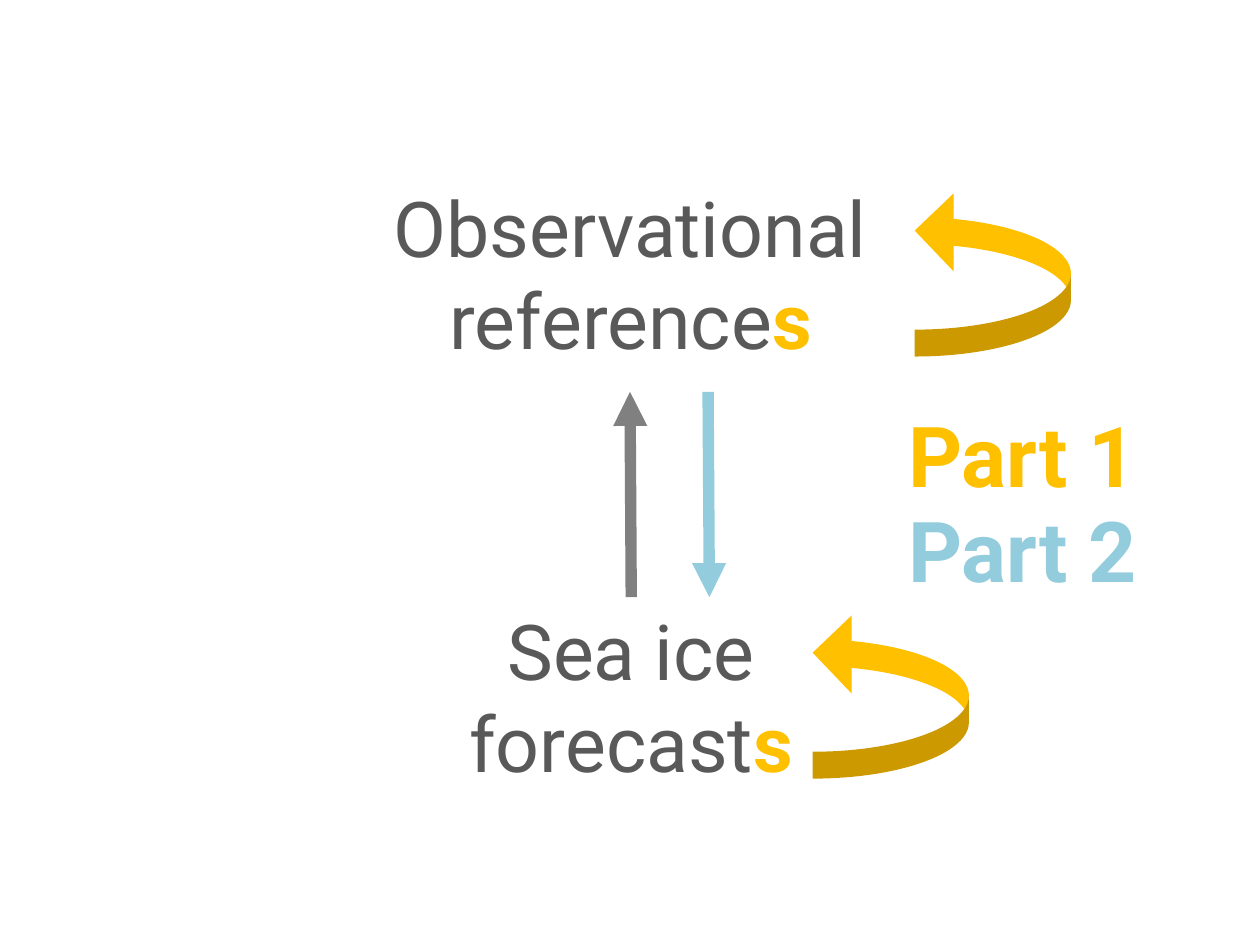
from pptx import Presentation
from pptx.dml.color import RGBColor
from pptx.enum.shapes import MSO_CONNECTOR, MSO_SHAPE
from pptx.enum.text import MSO_AUTO_SIZE, PP_ALIGN
from pptx.oxml.ns import qn
from pptx.util import Inches, Pt
from lxml import etree

LINE = MSO_CONNECTOR.STRAIGHT
LOOP = MSO_SHAPE.CURVED_LEFT_ARROW
GROW = MSO_AUTO_SIZE.SHAPE_TO_FIT_TEXT
LEFT, CENTER = PP_ALIGN.LEFT, PP_ALIGN.CENTER

FONT = "Roboto"
DARK = RGBColor(0x59, 0x59, 0x59)
GREY = RGBColor(0x80, 0x80, 0x80)
GOLD = RGBColor(0xFF, 0xC0, 0x00)
BLUE = RGBColor(0x93, 0xCD, 0xDD)


class Board:
    def __init__(self, slide):
        self.slide = slide

    def text(self, x, y, w, h, runs, size, align):
        """Add a text box of one paragraph; runs are (words, colour, bold)."""
        box = self.slide.shapes.add_textbox(
            Inches(x), Inches(y), Inches(w), Inches(h))
        frame = box.text_frame
        frame.word_wrap = True
        frame.auto_size = GROW
        para = frame.paragraphs[0]
        para.alignment = align
        para.font.name = FONT
        para.font.size = Pt(size)
        for words, color, bold in runs:
            run = para.add_run()
            run.text = words
            run.font.color.rgb = color
            run.font.bold = bold

    def topic(self, x, y, w, words):
        """Add a topic whose plural ending stands out."""
        runs = [(words, DARK, False), ("s", GOLD, True)]
        self.text(x, y, w, 1.58, runs, 44, CENTER)

    def label(self, y, words, color):
        self.text(7.11, y, 2.76, 0.91, [(words, color, True)], 48, LEFT)

    def arrow(self, start, end, color):
        x1, y1 = start
        x2, y2 = end
        line = self.slide.shapes.add_connector(
            LINE, Inches(x1), Inches(y1), Inches(x2), Inches(y2))
        line.line.color.rgb = color
        line.line.width = Pt(6.5)
        props = line._element.spPr
        etree.SubElement(props.find(qn("a:ln")), qn("a:tailEnd"),
                         type="triangle")
        etree.SubElement(props, qn("a:effectLst"))

    def loop(self, x, y):
        """Add a curved arrow that turns back to the upper left."""
        shape = self.slide.shapes.add_shape(
            LOOP, Inches(x), Inches(y), Inches(1.24), Inches(1.31))
        shape.adjustments[0] = 0.172
        shape._element.spPr.find(qn("a:xfrm")).set("flipV", "1")
        shape.shadow.inherit = False
        shape.fill.solid()
        shape.fill.fore_color.rgb = GOLD
        shape.line.fill.background()


def main():
    deck = Presentation()
    deck.slide_width, deck.slide_height = Inches(10), Inches(7.5)
    board = Board(deck.slides.add_slide(deck.slide_layouts[6]))

    board.topic(3.19, 4.74, 3.64, "Sea ice forecast")
    board.topic(3, 1.38, 4.01, "Observational reference")
    board.arrow((5.01, 4.74), (5, 3.11), GREY)
    board.loop(6.45, 4.87)
    board.loop(7.26, 1.52)
    board.arrow((5.62, 3.11), (5.63, 4.74), BLUE)
    board.label(3.15, "Part 1", GOLD)
    board.label(3.91, "Part 2", BLUE)

    deck.save("out.pptx")


if __name__ == "__main__":
    main()
